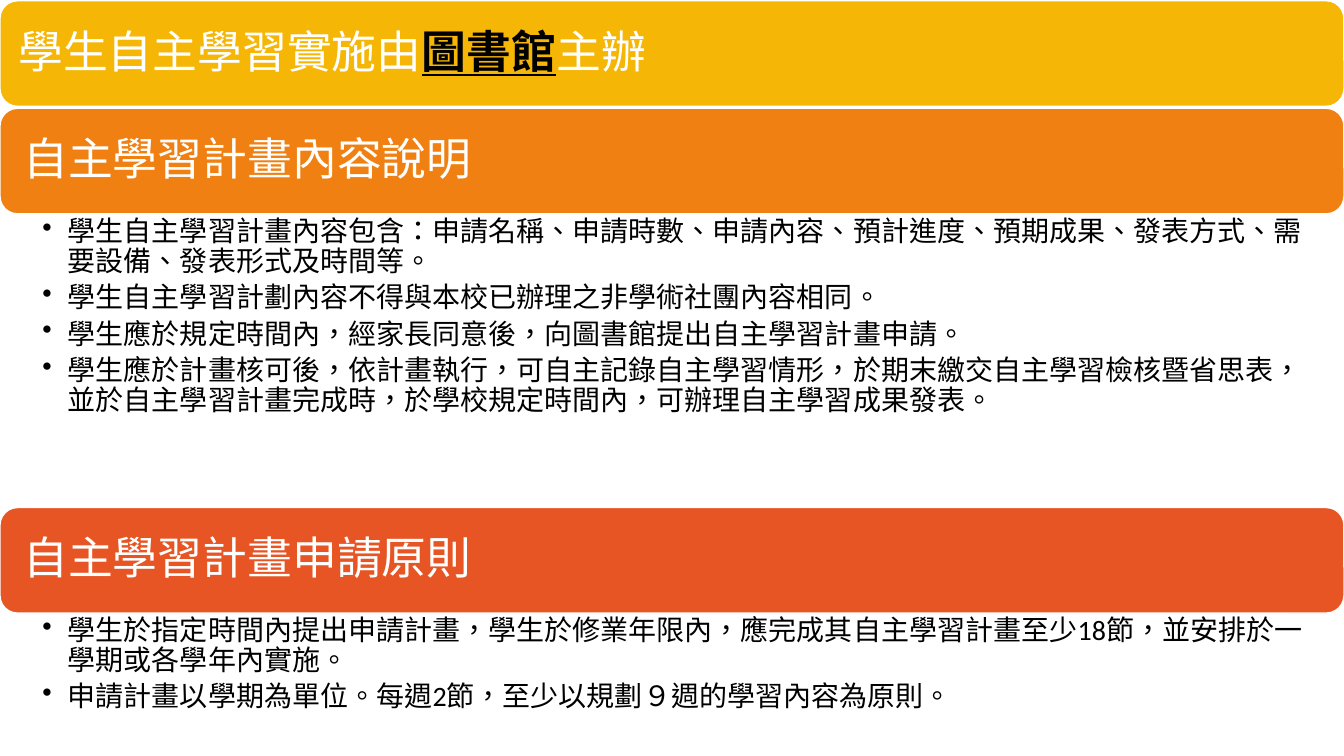
"""Build the slide on running student self-directed learning."""
from dataclasses import dataclass

import pptx
import pptx.dml.color
import pptx.enum.lang
import pptx.enum.shapes
import pptx.enum.text
import pptx.oxml
import pptx.oxml.ns
import pptx.util
from pptx.util import Cm, Pt

SECTIONS = [
    {"heading": ["學生自主學習實施由", "圖書館", "主辦"], "key": "圖書館",
     "fill": "F5B605", "points": [], "space": 0.05},
    {"heading": ["自主學習計畫內容說明"], "key": None,
     "fill": "F08012", "space": 7.4, "points": [
         "學生自主學習計畫內容包含：申請名稱、申請時數、申請內容、預計進度、預期成果、發表方式、需要設備、發表形式及時間等。",
         "學生自主學習計劃內容不得與本校已辦理之非學術社團內容相同。",
         "學生應於規定時間內，經家長同意後，向圖書館提出自主學習計畫申請。",
         "學生應於計畫核可後，依計畫執行，可自主記錄自主學習情形，於期末繳交自主學習檢核暨省思表，並於自主學習計畫完成時，於學校規定時間內，可辦理自主學習成果發表。",
     ]},
    {"heading": ["自主學習計畫申請原則"], "key": None,
     "fill": "E75524", "space": 3.58, "points": [
         "學生於指定時間內提出申請計畫，學生於修業年限內，應完成其自主學習計畫至少18節，並安排於一學期或各學年內實施。",
         "申請計畫以學期為單位。每週2節，至少以規劃９週的學習內容為原則。",
     ]},
]
WIDTH, HEIGHT, TOP, BANNER = 33.87, 19.05, 0.02, 2.66


@dataclass
class Theme:
    font: str = "Calibri"
    light: str = "FFFFFF"
    dark: str = "000000"
    heading: int = 32
    body: int = 20


THEME = Theme()


def rgb(value):
    return pptx.dml.color.RGBColor.from_string(value)


def style_run(r, size, color):
    r.font.name = THEME.font
    r.font.size = Pt(size)
    r.font.color.rgb = rgb(color)
    r.font.language_id = pptx.enum.lang.MSO_LANGUAGE_ID.TRADITIONAL_CHINESE


def set_frame(tf, left, top, right, anchor):
    tf.word_wrap = True
    tf.auto_size = pptx.enum.text.MSO_AUTO_SIZE.NONE
    tf.vertical_anchor = anchor
    tf.margin_left, tf.margin_right = Cm(left), Cm(right)
    tf.margin_top = tf.margin_bottom = Cm(top)


def add_banner(s, section, top):
    sp = s.shapes.add_shape(pptx.enum.shapes.MSO_SHAPE.ROUNDED_RECTANGLE,
                            0, Cm(top), Cm(WIDTH), Cm(BANNER))
    sp.shadow.inherit = False
    sp.fill.solid()
    sp.fill.fore_color.rgb = rgb(section["fill"])
    sp.line.color.rgb = rgb(THEME.light)
    sp.line.width = Pt(1)
    return sp


def write_heading(tf, section):
    set_frame(tf, 0.46, 0.46, 0.46, pptx.enum.text.MSO_ANCHOR.MIDDLE)
    p = tf.paragraphs[0]
    p.alignment = pptx.enum.text.PP_ALIGN.LEFT
    p.line_spacing = 0.9
    for text in section["heading"]:
        r = p.add_run()
        r.text = text
        is_key = text == section["key"]
        style_run(r, THEME.heading, THEME.dark if is_key else THEME.light)
        r.font.bold = r.font.underline = is_key


def add_points(s, section, top):
    sp = s.shapes.add_textbox(0, Cm(top), Cm(WIDTH), Cm(section["space"]))
    tf = sp.text_frame
    tf.text = "\n".join(section["points"])
    set_frame(tf, 1.07, 0.08, 0.4, pptx.enum.text.MSO_ANCHOR.TOP)
    for p in tf.paragraphs:
        p.level = 1
        p.line_spacing = 0.9
        p.space_after = Pt(4.3)
        pPr = p._p.get_or_add_pPr()
        pPr.set("marL", str(Cm(0.64)))
        pPr.set("indent", str(-Cm(0.64)))
        pPr.append(pptx.oxml.parse_xml(
            f'<a:buChar {pptx.oxml.ns.nsdecls("a")} char="•"/>'))
        style_run(p.runs[0], THEME.body, THEME.dark)


def main():
    prs = pptx.Presentation()
    prs.slide_width, prs.slide_height = Cm(WIDTH), Cm(HEIGHT)
    s = prs.slides.add_slide(prs.slide_layouts[5])
    title = s.shapes.title
    top = TOP
    for i, section in enumerate(SECTIONS):
        sp = add_banner(s, section, top)
        if i == 0:
            title.left, title.top = sp.left, sp.top
            title.width, title.height = sp.width, sp.height
            sp.element.addnext(title.element)
            sp = title
        write_heading(sp.text_frame, section)
        top += BANNER
        if section["points"]:
            add_points(s, section, top)
        top += section["space"]
    prs.save("out.pptx")


if __name__ == "__main__":
    main()
